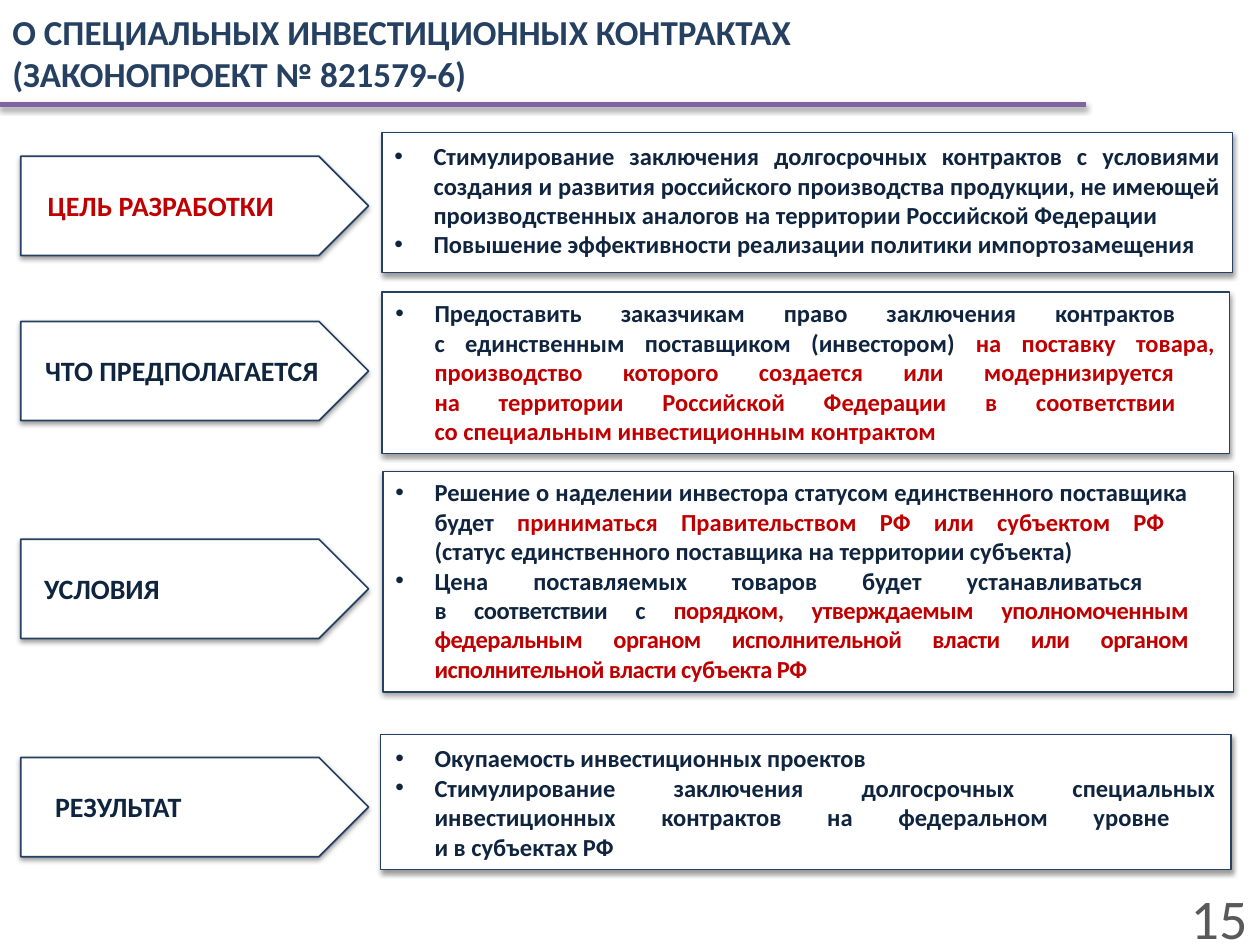
from lxml import etree
from pptx import Presentation
from pptx.dml.color import RGBColor
from pptx.enum.shapes import MSO_CONNECTOR, MSO_SHAPE
from pptx.enum.text import MSO_ANCHOR, MSO_AUTO_SIZE, PP_ALIGN
from pptx.oxml.ns import qn
from pptx.util import Cm, Pt

RECTANGLE = MSO_SHAPE.RECTANGLE
PENTAGON = MSO_SHAPE.PENTAGON
STRAIGHT = MSO_CONNECTOR.STRAIGHT
TOP, MIDDLE = MSO_ANCHOR.TOP, MSO_ANCHOR.MIDDLE
LEFT, RIGHT, JUSTIFY = PP_ALIGN.LEFT, PP_ALIGN.RIGHT, PP_ALIGN.JUSTIFY
FIT, FIXED = MSO_AUTO_SIZE.SHAPE_TO_FIT_TEXT, MSO_AUTO_SIZE.NONE

NAVY, DARK, RED = "254061", "0F243E", "C00000"
PURPLE, GREY, WHITE = "8064A2", "595959", "FFFFFF"
TIGHT = -0.3


def color(value):
    return RGBColor.from_string(value)


class SlideBuilder:
    font = "Calibri"
    arrow_left, arrow_width, arrow_height = 0.42, 7.01, 2.0
    label_offset, label_height = 0.53, 0.94
    bullet_indent = 0.79

    def __init__(self, page):
        self.page = page

    def shadow(self, shape, distance, opacity):
        properties = shape._element.spPr
        effects = properties.find(qn("a:effectLst"))
        if effects is None:
            effects = etree.SubElement(properties, qn("a:effectLst"))
        outer = etree.SubElement(
            effects, qn("a:outerShdw"), blurRad=str(Pt(3.1)),
            dist=str(Pt(distance)), dir="5400000", rotWithShape="0")
        tint = etree.SubElement(outer, qn("a:srgbClr"), val="000000")
        etree.SubElement(tint, qn("a:alpha"), val=str(opacity * 1000))

    def panel(self, kind, left, top, width, height, weight):
        shape = self.page.shapes.add_shape(
            kind, Cm(left), Cm(top), Cm(width), Cm(height))
        shape.fill.solid()
        shape.fill.fore_color.rgb = color(WHITE)
        shape.line.color.rgb = color(NAVY)
        shape.line.width = Pt(weight)
        shape.shadow.inherit = False
        self.shadow(shape, 1.6, 38)

    def rule(self, top, width):
        line = self.page.shapes.add_connector(
            STRAIGHT, Cm(0), Cm(top), Cm(width), Cm(top))
        line.line.color.rgb = color(PURPLE)
        line.line.width = Pt(3)
        self.shadow(line, 1.8, 35)

    def span(self, para, text, size, tone, bold, spacing=0):
        for index, piece in enumerate(text.split("\n")):
            if index:
                para.add_line_break()
            if not piece:
                continue
            span = para.add_run()
            span.text = piece
            span.font.name = self.font
            span.font.size = Pt(size)
            span.font.bold = bold
            span.font.color.rgb = color(tone)
            if spacing:
                span._r.get_or_add_rPr().set("spc", str(round(spacing * 100)))

    def bullet(self, para):
        properties = para._p.get_or_add_pPr()
        properties.set("marL", str(Cm(self.bullet_indent)))
        properties.set("indent", str(-Cm(self.bullet_indent)))
        etree.SubElement(properties, qn("a:buFont"), typeface="Arial")
        etree.SubElement(properties, qn("a:buChar"), char="•")

    def text(self, area, paragraphs, size, align=JUSTIFY, anchor=TOP,
             fit=FIT, bold=True, bullets=False):
        box = self.page.shapes.add_textbox(*(Cm(length) for length in area))
        frame = box.text_frame
        frame.word_wrap = True
        frame.auto_size = fit
        frame.vertical_anchor = anchor
        for index, spans in enumerate(paragraphs):
            para = frame.add_paragraph() if index else frame.paragraphs[0]
            para.alignment = align
            if bullets:
                self.bullet(para)
            for text, tone, *spacing in spans:
                self.span(para, text, size, tone, bold, *spacing)

    def section(self, arrow_top, label, label_tone, label_left, label_width,
                panel_area, text_area, paragraphs):
        self.panel(PENTAGON, self.arrow_left, arrow_top,
                   self.arrow_width, self.arrow_height, 1)
        label_area = (label_left, arrow_top + self.label_offset,
                      label_width, self.label_height)
        self.text(label_area, [[(label, label_tone)]], 16)
        self.panel(RECTANGLE, *panel_area, 0.75)
        self.text(text_area, paragraphs, 14, bullets=True)


SECTIONS = [
    (3.15, "ЦЕЛЬ РАЗРАБОТКИ", RED, 0.71, 5.84,
     (7.7, 2.67, 17.15, 2.82), (7.7, 2.72, 17.15, 2.64),
     [[("Стимулирование заключения долгосрочных контрактов с условиями "
        "создания и развития российского производства продукции, не имеющей "
        "производственных аналогов на территории Российской Федерации", DARK)],
      [("Повышение эффективности реализации политики импортозамещения", DARK)]]),
    (6.48, "ЧТО ПРЕДПОЛАГАЕТСЯ", DARK, 0.66, 6.17,
     (7.7, 5.89, 17.09, 3.25), (7.72, 5.89, 17.02, 3.25),
     [[("Предоставить заказчикам право заключения контрактов \n"
        "с единственным поставщиком (инвестором) ", DARK),
       ("на поставку товара, производство которого создается или "
        "модернизируется \nна территории Российской Федерации в соответствии \n"
        "со специальным инвестиционным контрактом", RED)]]),
    (10.87, "УСЛОВИЯ", DARK, 0.64, 5.61,
     (7.72, 9.5, 17.15, 4.45), (7.72, 9.5, 16.48, 4.45),
     [[("Решение о наделении инвестора статусом единственного поставщика "
        "будет ", DARK),
       ("приниматься Правительством РФ или субъектом РФ \n", RED),
       ("(статус единственного поставщика на территории субъекта)", DARK)],
      [("Цена поставляемых товаров будет устанавливаться \n", DARK),
       ("в соответствии с ", DARK, TIGHT),
       ("порядком, утверждаемым уполномоченным федеральным органом "
        "исполнительной власти или органом исполнительной власти "
        "субъекта РФ", RED, TIGHT)]]),
    (15.27, "РЕЗУЛЬТАТ", DARK, 0.86, 5.82,
     (7.67, 14.81, 17.15, 2.72), (7.72, 14.86, 17.04, 2.64),
     [[("Окупаемость инвестиционных проектов", DARK)],
      [("Стимулирование заключения долгосрочных специальных "
        "инвестиционных контрактов на федеральном уровне \n"
        "и в субъектах РФ", DARK)]]),
]


def main():
    deck = Presentation()
    deck.slide_width, deck.slide_height = Cm(25.4), Cm(19.05)
    builder = SlideBuilder(deck.slides.add_slide(deck.slide_layouts[6]))
    for section in SECTIONS:
        builder.section(*section)
    title = [[("О СПЕЦИАЛЬНЫХ ИНВЕСТИЦИОННЫХ КОНТРАКТАХ", NAVY)],
             [("(ЗАКОНОПРОЕКТ № 821579-6)", NAVY)]]
    builder.text((0, 0, 21.92, 2.11), title, 20, LEFT, MIDDLE, FIXED)
    builder.rule(2.11, 21.89)
    builder.text((23.72, 17.91, 1.68, 1.14), [[("15", GREY)]], 32,
                 RIGHT, MIDDLE, FIXED, bold=False)
    deck.save("out.pptx")


if __name__ == "__main__":
    main()
